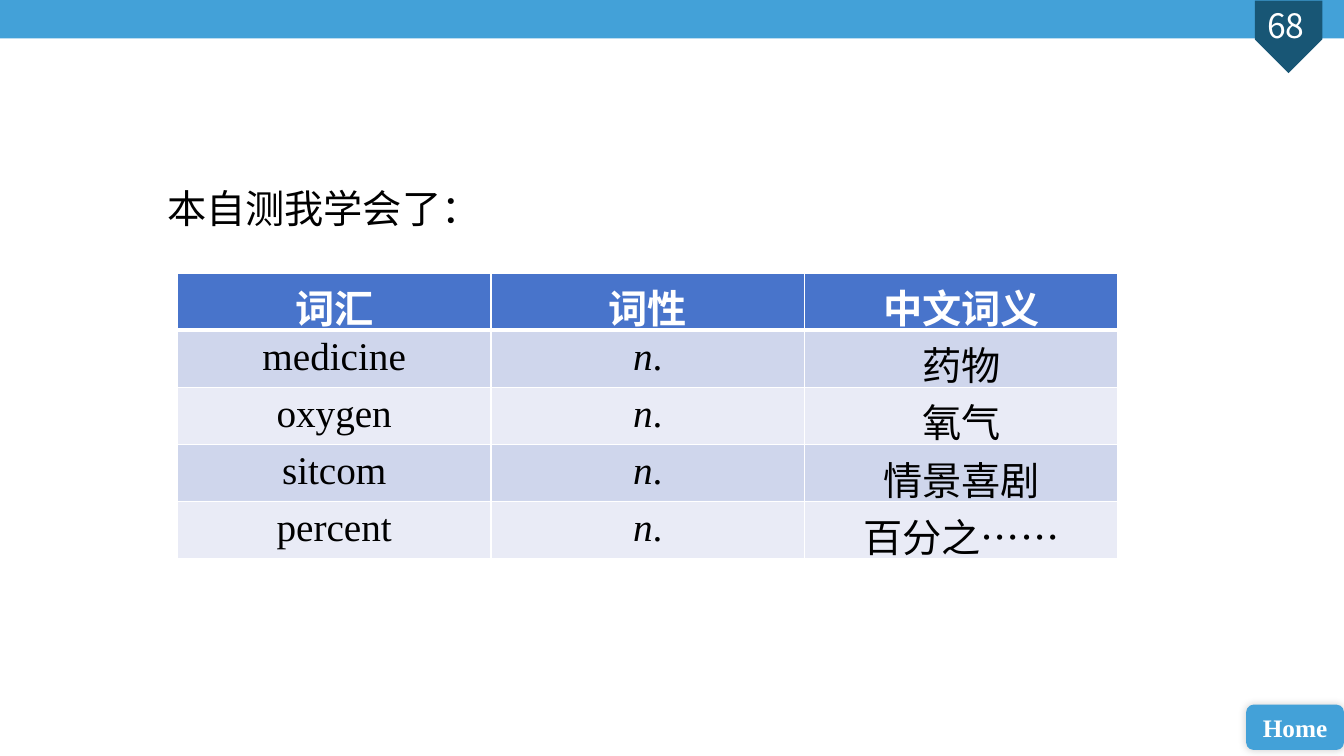
from lxml import etree
from pptx import Presentation
from pptx.dml.color import RGBColor
from pptx.enum.shapes import MSO_SHAPE
from pptx.enum.text import MSO_ANCHOR, PP_ALIGN
from pptx.oxml.ns import qn
from pptx.util import Inches, Pt

RECT = MSO_SHAPE.RECTANGLE
PENTAGON = MSO_SHAPE.PENTAGON
ROUNDED = MSO_SHAPE.ROUNDED_RECTANGLE
CENTER = PP_ALIGN.CENTER
LEFT = PP_ALIGN.LEFT
MIDDLE = MSO_ANCHOR.MIDDLE

COLORS = {
    "bar": "43A1D8",
    "marker": "185675",
    "header": "4874CB",
    "band_dark": "CFD6EC",
    "band_light": "E9EBF6",
    "white": "FFFFFF",
    "black": "000000",
}
LATIN = "Times New Roman"
CHINESE = "Noto Sans CJK SC"
VOCABULARY = [
    ("词汇", "词性", "中文词义"),
    ("medicine", "n.", "药物"),
    ("oxygen", "n.", "氧气"),
    ("sitcom", "n.", "情景喜剧"),
    ("percent", "n.", "百分之……"),
]


def rgb(color):
    """Return the named palette colour."""
    return RGBColor.from_string(COLORS[color])


def add_run(paragraph, text, color, name=LATIN, **formats):
    """Append a run with its fonts, colour and other font values."""
    run = paragraph.add_run()
    run.text = text
    run.font.color.rgb = rgb(color)
    for key, value in {"name": name, **formats}.items():
        setattr(run.font, key, value)
    east_asian = etree.SubElement(run.font._element, qn("a:ea"))
    east_asian.set("typeface", CHINESE)


def add_block(slide, preset, box, color):
    """Add a plain filled shape without outline or shadow."""
    block = slide.shapes.add_shape(preset, *map(Inches, box))
    block.fill.solid()
    block.fill.fore_color.rgb = rgb(color)
    block.line.fill.background()
    block.shadow.inherit = False
    return block


def add_label(slide, box, align):
    """Add a wrapping text box and return its paragraph."""
    frame = slide.shapes.add_textbox(*map(Inches, box)).text_frame
    frame.word_wrap = True
    frame.paragraphs[0].alignment = align
    return frame.paragraphs[0]


def add_glow(block):
    """Give the block a soft dark shadow."""
    effects = block._element.spPr.find(qn("a:effectLst"))
    shadow = etree.SubElement(effects, qn("a:outerShdw"), blurRad=str(Pt(6)),
                              dist="0", dir=str(315 * 60000), rotWithShape="0")
    tone = etree.SubElement(shadow, qn("a:srgbClr"), val=COLORS["black"])
    etree.SubElement(tone, qn("a:alpha"), val="20000")


def add_home_button(slide):
    """Add the Home button in the lower right corner."""
    button = add_block(slide, ROUNDED, (12.36, 6.99, 0.97, 0.45), "bar")
    add_glow(button)
    frame = button.text_frame
    frame.vertical_anchor = MIDDLE
    frame.paragraphs[0].alignment = CENTER
    add_run(frame.paragraphs[0], "Home", "white", size=Pt(18), bold=True)


def set_borders(cell, widths):
    """Draw white cell borders of the given point widths."""
    properties = cell._tc.get_or_add_tcPr()
    for side, width in widths.items():
        border = etree.SubElement(properties, qn(f"a:ln{side}"), w=str(Pt(width)))
        fill = etree.SubElement(border, qn("a:solidFill"))
        etree.SubElement(fill, qn("a:srgbClr"), val=COLORS["white"])


def fill_cell(cell, text, row, column):
    """Write one vocabulary cell in its header or band style."""
    header = row == 0
    set_borders(cell, {"L": 1, "R": 1, "T": 3 if row == 1 else 1, "B": 3 if header else 1})
    cell.fill.solid()
    band = "band_dark" if row % 2 else "band_light"
    cell.fill.fore_color.rgb = rgb("header" if header else band)
    paragraph = cell.text_frame.paragraphs[0]
    paragraph.alignment = CENTER
    word_class = column == 1 and not header
    for part in text if word_class else [text]:
        add_run(paragraph, part, "white" if header else "black", size=Pt(28),
                bold=header, italic=word_class and part != ".")


def add_vocabulary(slide):
    """Add the vocabulary table."""
    rows, columns = len(VOCABULARY), len(VOCABULARY[0])
    box = map(Inches, (1.76, 2.71, 9.33, 2.08))
    table = slide.shapes.add_table(rows, columns, *box).table
    for row, words in enumerate(VOCABULARY):
        for column, word in enumerate(words):
            fill_cell(table.cell(row, column), word, row, column)


def main():
    """Build the vocabulary slide and save it."""
    deck = Presentation()
    deck.slide_width, deck.slide_height = Inches(13.33), Inches(7.5)
    slide = deck.slides.add_slide(deck.slide_layouts[6])
    add_block(slide, RECT, (0, 0, 13.33, 0.38), "bar")
    marker = add_block(slide, PENTAGON, (12.42, 0.03, 0.72, 0.67), "marker")
    marker.rotation = 90
    page_number = add_label(slide, (12.29, 0, 0.98, 0.5), CENTER)
    add_run(page_number, "68", "white", CHINESE, size=Pt(24))
    add_run(page_number, " ", "white", CHINESE, size=Pt(18))
    add_home_button(slide)
    add_vocabulary(slide)
    heading = add_label(slide, (1.56, 1.78, 3.87, 0.57), LEFT)
    add_run(heading, "本自测我学会了：", "black", "Calibri", size=Pt(28))
    deck.save("out.pptx")


if __name__ == "__main__":
    main()
